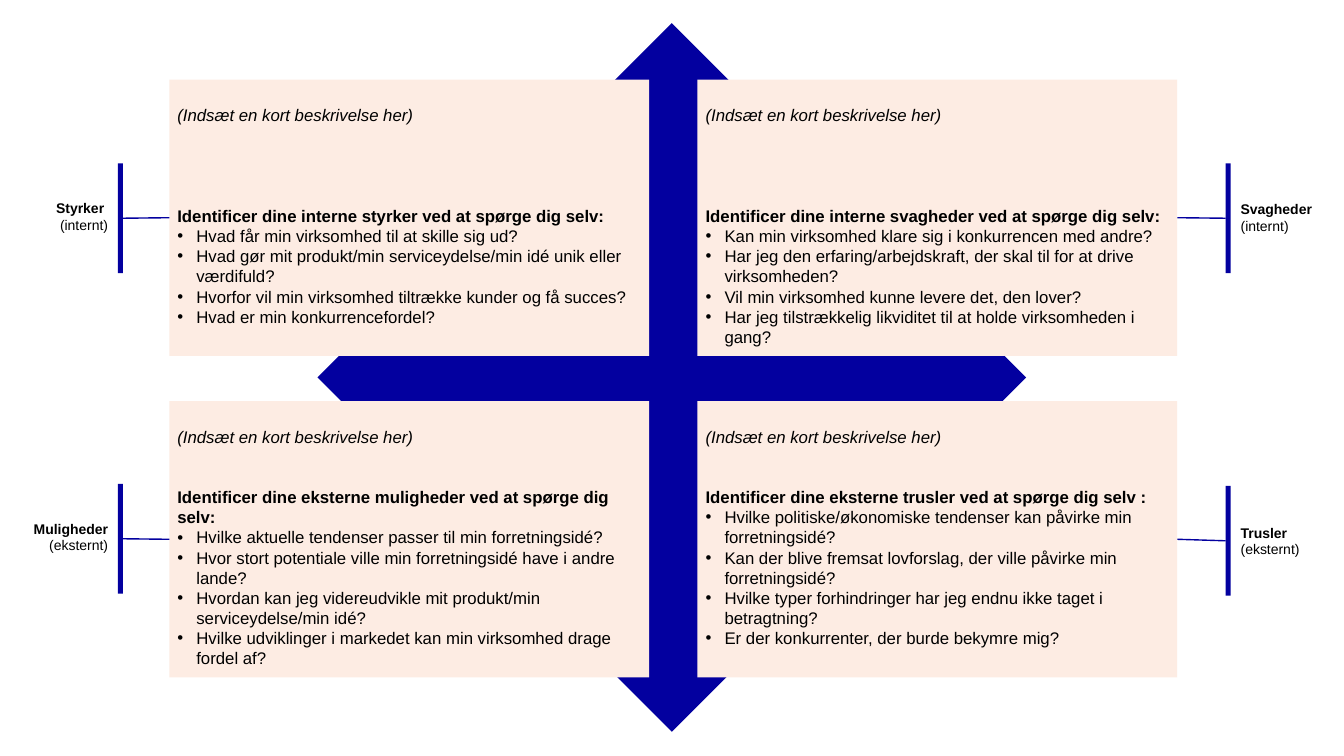
import pptx
import pptx.util
import pptx.dml.color
import pptx.enum.shapes
import pptx.enum.text
import lxml.etree
import pptx.oxml.ns

Pt = pptx.util.Pt
RGB = pptx.dml.color.RGBColor
MSO = pptx.enum.shapes.MSO_SHAPE
ALIGN = pptx.enum.text.PP_ALIGN
qn = pptx.oxml.ns.qn
BLUE = RGB(0x03, 0x00, 0x9F)
PEACH = RGB(0xFD, 0xEC, 0xE3)
BLACK = RGB(0, 0, 0)
LINE = 14.4
WIDE, HIGH = 342.72, 197.28

deck = pptx.Presentation()
deck.slide_width, deck.slide_height = Pt(960), Pt(540)
slide = deck.slides.add_slide(deck.slide_layouts[6])


def block(kind, x, y, w, h, fill):
    shape = slide.shapes.add_shape(kind, Pt(x), Pt(y), Pt(w), Pt(h))
    shape.shadow.inherit = False
    shape.fill.solid()
    shape.fill.fore_color.rgb = fill
    shape.line.fill.background()
    return shape


def style(para, size, align, bold=False, italic=False):
    para.alignment = align
    for run in para.runs:
        font = run.font
        font.name, font.size = "Arial", Pt(size)
        font.bold, font.italic = bold, italic
        font.color.rgb = BLACK


# Each part: column, row, label, scope, blank lines, bar top, label top, heading, questions
parts = [
    (0, 0, "Styrker ", "(internt)", 4, 116.64, 138.96,
     "Identificer dine interne styrker ved at spørge dig selv:",
     ["Hvad får min virksomhed til at skille sig ud?",
      "Hvad gør mit produkt/min serviceydelse/min idé unik eller værdifuld?",
      "Hvorfor vil min virksomhed tiltrække kunder og få succes?",
      "Hvad er min konkurrencefordel?"]),
    (1, 0, "Svagheder", "(internt)", 4, 116.64, 139.68,
     "Identificer dine interne svagheder ved at spørge dig selv:",
     ["Kan min virksomhed klare sig i konkurrencen med andre?",
      "Har jeg den erfaring/arbejdskraft, der skal til for at drive virksomheden?",
      "Vil min virksomhed kunne levere det, den lover?",
      "Har jeg tilstrækkelig likviditet til at holde virksomheden i gang?"]),
    (0, 1, "Muligheder", "(eksternt)", 2, 345.6, 367.92,
     "Identificer dine eksterne muligheder ved at spørge dig selv:",
     ["Hvilke aktuelle tendenser passer til min forretningsidé?",
      "Hvor stort potentiale ville min forretningsidé have i andre lande?",
      "Hvordan kan jeg videreudvikle mit produkt/min serviceydelse/min idé?",
      "Hvilke udviklinger i markedet kan min virksomhed drage fordel af?"]),
    (1, 1, "Trusler", "(eksternt)", 2, 347.04, 370.8,
     "Identificer dine eksterne trusler ved at spørge dig selv :",
     ["Hvilke politiske/økonomiske tendenser kan påvirke min forretningsidé?",
      "Kan der blive fremsat lovforslag, der ville påvirke min forretningsidé?",
      "Hvilke typer forhindringer har jeg endnu ikke taget i betragtning?",
      "Er der konkurrenter, der burde bekymre mig?"]),
]

# Diamond behind the panels
block(MSO.DIAMOND, 226.8, 16.56, 506.16, 506.16, BLUE)

for col, row, label, scope, gap, top, high, head, asks in parts:
    # Panel with its text
    panel = block(MSO.RECTANGLE, 120.96 + col * 377.28, 56.88 + row * 229.68,
                  WIDE, HIGH, PEACH)
    frame = panel.text_frame
    frame.word_wrap = True
    frame.vertical_anchor = pptx.enum.text.MSO_ANCHOR.TOP
    frame.margin_left = frame.margin_right = 0
    frame.margin_top, frame.margin_bottom = Pt(3.6 + LINE), Pt(3.6)
    frame.text = "\n".join(["(Indsæt en kort beskrivelse her)", head] + asks)
    for i, para in enumerate(frame.paragraphs):
        style(para, 12, ALIGN.LEFT, bold=i == 1, italic=i == 0)
        props = para._p.get_or_add_pPr()
        props.set("marL", str(Pt(19.3 if i > 1 else 5.76)))
        props.set("indent", str(Pt(-13.5 if i > 1 else 0)))
        if i == 1:
            para.space_before = Pt(gap * LINE)
        if i > 1:
            face = lxml.etree.SubElement(props, qn("a:buFont"))
            face.set("typeface", "Arial")
            lxml.etree.SubElement(props, qn("a:buChar")).set("char", "•")

    # Side bar joined to the panel
    bar = block(MSO.RECTANGLE, 875.52 if col else 84.24, top, 3.6, 78.48, BLUE)
    link = slide.shapes.add_connector(
        pptx.enum.shapes.MSO_CONNECTOR.STRAIGHT, 0, 0, 0, 0)
    link.begin_connect(panel, 3 if col else 1)
    link.end_connect(bar, 1 if col else 3)
    link.line.color.rgb = BLUE
    link.line.width = Pt(1)
    lxml.etree.SubElement(link._element.spPr, qn("a:effectLst"))

    # Label outside the bar
    box = slide.shapes.add_textbox(Pt(879.12 if col else -5.76), Pt(high),
                                   Pt(79.2 if col else 90), Pt(31.68))
    box.text_frame.word_wrap = True
    box.text_frame.text = label + "\n" + scope
    for i, para in enumerate(box.text_frame.paragraphs):
        style(para, 10, ALIGN.LEFT if col else ALIGN.RIGHT, bold=i == 0)

deck.save("out.pptx")
